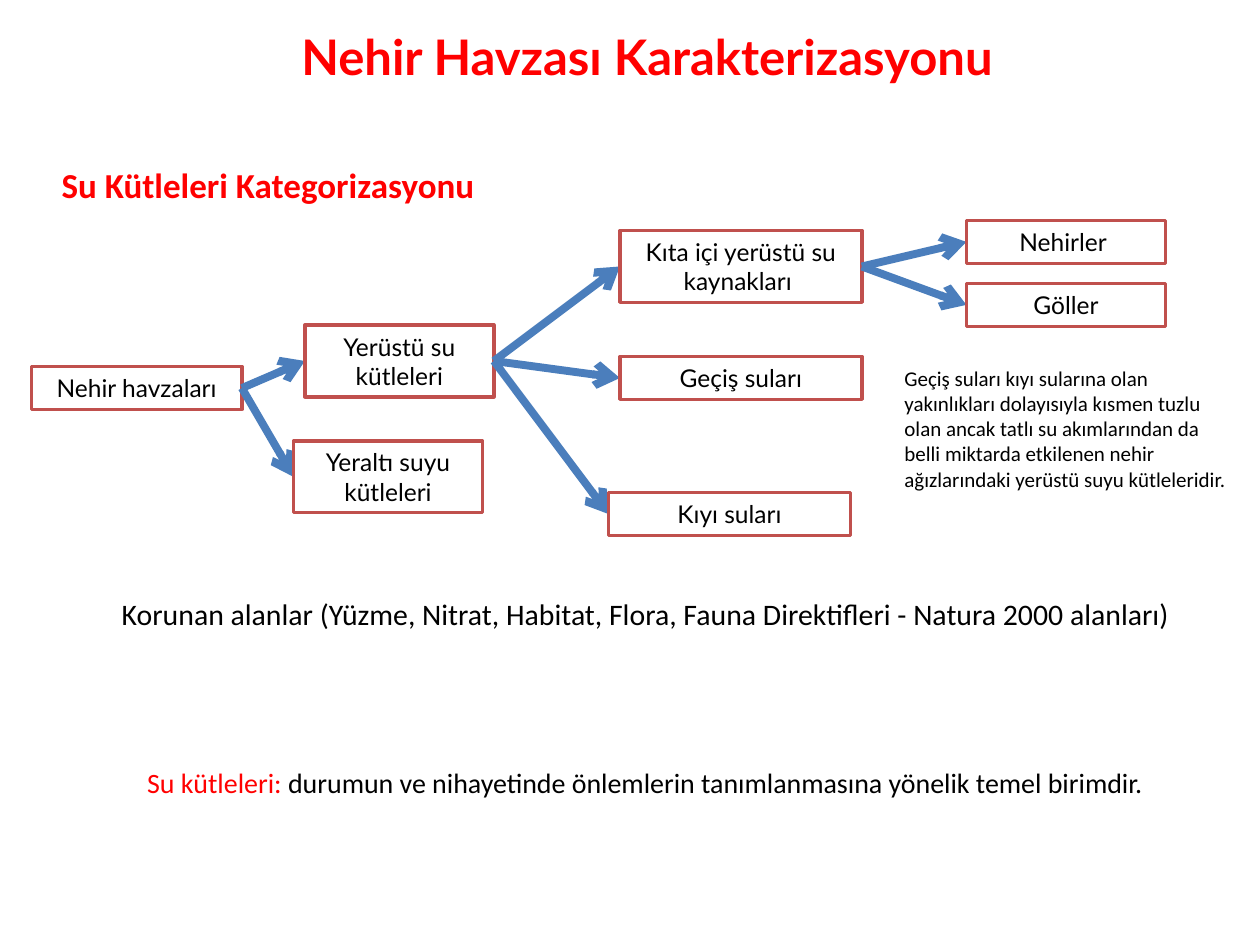
import pptx
import pptx.util
import pptx.dml.color
import pptx.enum.shapes
import pptx.enum.text
import pptx.oxml.ns
import lxml.etree

Inches = pptx.util.Inches
Pt = pptx.util.Pt
RGBColor = pptx.dml.color.RGBColor
ALIGN = pptx.enum.text.PP_ALIGN
AUTO_SIZE = pptx.enum.text.MSO_AUTO_SIZE
qn = pptx.oxml.ns.qn

RED = RGBColor(0xFF, 0x00, 0x00)
BLACK = RGBColor(0x00, 0x00, 0x00)
WHITE = RGBColor(0xFF, 0xFF, 0xFF)
BORDER = RGBColor(0xC0, 0x50, 0x4D)
ARROW = RGBColor(0x4B, 0x7E, 0xBC)

LEFT_SITE, RIGHT_SITE = 1, 3
ONE_LINE, TWO_LINES = 0.34, 0.57

# Category boxes: parent, text, left, top, width, height
CATEGORIES = [
    (None, "Nehir havzaları", 0.25, 2.91, 1.67, ONE_LINE),
    ("Nehir havzaları", "Yerüstü su kütleleri", 2.42, 2.58, 1.5, TWO_LINES),
    ("Nehir havzaları", "Yeraltı suyu kütleleri", 2.33, 3.5, 1.5, TWO_LINES),
    ("Yerüstü su kütleleri", "Kıta içi yerüstü su kaynakları ", 4.92, 1.83, 1.92, TWO_LINES),
    ("Yerüstü su kütleleri", "Geçiş suları", 4.92, 2.83, 1.92, ONE_LINE),
    ("Yerüstü su kütleleri", "Kıyı suları", 4.83, 3.91, 1.92, ONE_LINE),
    ("Kıta içi yerüstü su kaynakları ", "Nehirler ", 7.67, 1.75, 1.58, ONE_LINE),
    ("Kıta içi yerüstü su kaynakları ", "Göller", 7.67, 2.25, 1.58, ONE_LINE),
]


def add_run(para, text, font_name, size, color, bold=False):
    run = para.add_run()
    run.text = text
    run.font.name = font_name
    run.font.size = Pt(size)
    run.font.color.rgb = color
    run.font.bold = bold


def set_title(page, text):
    title = page.shapes.title
    title.left, title.top = Inches(1.33), Inches(0.16)
    title.width, title.height = Inches(7.5), Inches(0.57)
    title.text_frame.auto_size = AUTO_SIZE.NONE
    para = title.text_frame.paragraphs[0]
    para.alignment = ALIGN.CENTER
    properties = para._p.get_or_add_pPr()
    properties.set("marL", str(Inches(0.21)))
    properties.set("indent", str(Inches(-0.1)))
    add_run(para, text, "Lato", 28, RED, bold=True)


def add_text(page, position, runs, size, align=ALIGN.LEFT, spacing=None, bold=False):
    box = page.shapes.add_textbox(*map(Inches, position))
    box.text_frame.word_wrap = True
    box.text_frame.auto_size = AUTO_SIZE.SHAPE_TO_FIT_TEXT
    para = box.text_frame.paragraphs[0]
    para.alignment = align
    para.line_spacing = spacing
    for text, color in runs:
        add_run(para, text, "Calibri", size, color, bold)


def add_category(page, text, position):
    box = page.shapes.add_shape(
        pptx.enum.shapes.MSO_SHAPE.RECTANGLE, *map(Inches, position))
    box.shadow.inherit = False
    box.fill.solid()
    box.fill.fore_color.rgb = WHITE
    box.line.color.rgb = BORDER
    box.line.width = Pt(2)
    box.text_frame.word_wrap = True
    box.text_frame.auto_size = AUTO_SIZE.SHAPE_TO_FIT_TEXT
    para = box.text_frame.paragraphs[0]
    para.alignment = ALIGN.CENTER
    add_run(para, text, "Lato", 14, BLACK)
    return box


def add_arrow(page):
    arrow = page.shapes.add_connector(
        pptx.enum.shapes.MSO_CONNECTOR.STRAIGHT, 0, 0, 0, 0)
    arrow.line.color.rgb = ARROW
    arrow.line.width = Pt(4.5)
    lxml.etree.SubElement(arrow.line._get_or_add_ln(), qn("a:tailEnd"), type="arrow")
    lxml.etree.SubElement(arrow._element.spPr, qn("a:effectLst"))
    return arrow


def add_category_tree(page):
    boxes = {}
    for parent, text, *position in CATEGORIES:
        # Each arrow lies above its parent box and below its child box
        arrow = add_arrow(page) if parent else None
        boxes[text] = add_category(page, text, position)
        if arrow is not None:
            arrow.begin_connect(boxes[parent], RIGHT_SITE)
            arrow.end_connect(boxes[text], LEFT_SITE)


def main():
    deck = pptx.Presentation()
    deck.slide_width, deck.slide_height = Inches(10), Inches(7.5)
    page = deck.slides.add_slide(deck.slide_layouts[5])

    # Headings
    set_title(page, "Nehir Havzası Karakterizasyonu")
    add_text(page, (0.39, 1.25, 3.59, 0.44),
             [("Su Kütleleri Kategorizasyonu", RED)], 20, bold=True)

    # Water body categories
    add_category_tree(page)

    # Note on transitional waters
    add_text(page, (7.08, 2.85, 2.83, 1.11),
             [("Geçiş suları kıyı sularına olan yakınlıkları dolayısıyla kısmen "
               "tuzlu olan ancak tatlı su akımlarından da belli miktarda etkilenen "
               "nehir ağızlarındaki yerüstü suyu kütleleridir.", BLACK)], 12)

    # Closing statements
    add_text(page, (0.25, 4.71, 9.75, 0.36),
             [("Korunan alanlar (Yüzme, Nitrat, Habitat, Flora, Fauna Direktifleri "
               "- Natura 2000 alanları)", BLACK)], 17, ALIGN.CENTER, 0.9)
    add_text(page, (0.33, 6.06, 9.58, 0.34),
             [("Su kütleleri: ", RED),
              ("durumun ve nihayetinde önlemlerin tanımlanmasına yönelik temel "
               "birimdir.", BLACK)], 16, ALIGN.CENTER, 0.9)

    deck.save("out.pptx")


if __name__ == "__main__":
    main()
